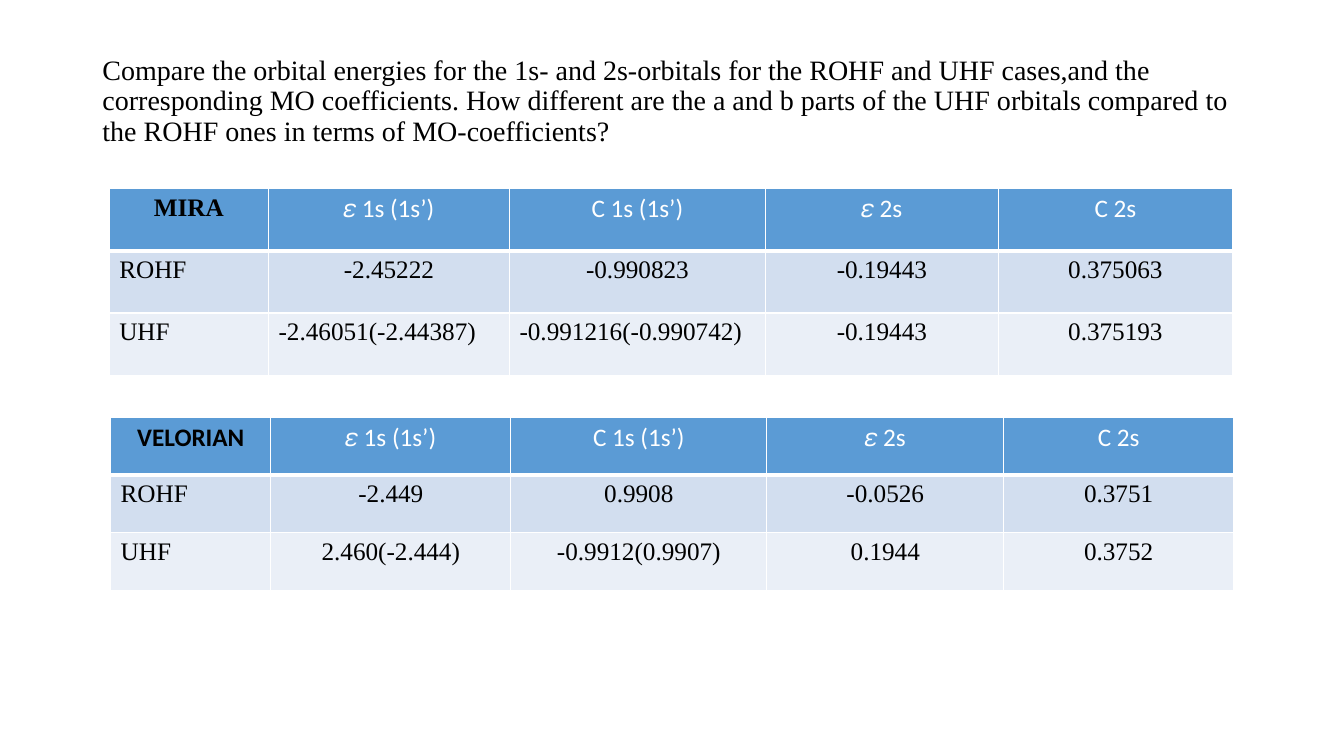
from lxml import etree
from pptx import Presentation
from pptx.dml.color import RGBColor
from pptx.enum.text import MSO_AUTO_SIZE, PP_ALIGN
from pptx.oxml.ns import qn
from pptx.util import Pt

LEFT, CENTER = PP_ALIGN.LEFT, PP_ALIGN.CENTER
NO_FIT = MSO_AUTO_SIZE.NONE
SERIF, SANS = "Times New Roman", "Calibri"
COLORS = {"text": "000000", "white": "FFFFFF", "header": "5B9BD5",
          "odd": "D2DEEF", "even": "EAEFF7"}
HEADINGS = ["𝜀 1s (1s’)", "C 1s (1s’)", "𝜀 2s", "C 2s"]
QUESTION = ("Compare the orbital energies for the 1s- and 2s-orbitals for the ROHF and UHF "
            "cases,and the corresponding MO coefficients. How different are the a and b parts "
            "of the UHF orbitals compared to the ROHF ones in terms of MO-coefficients?")


def write(tf, text, size=18, font=SERIF, color="text", bold=False, align=LEFT):
    """Put one formatted paragraph into a text frame and return it."""
    p = tf.paragraphs[0]
    p.alignment = align
    r = p.add_run()
    r.text = text
    r.font.size, r.font.name, r.font.bold = Pt(size), font, bold
    r.font.color.rgb = RGBColor.from_string(COLORS[color])
    return p


def add_borders(cell, top, bottom):
    """Draw white cell borders, with the given top and bottom widths."""
    tc_pr = cell._tc.get_or_add_tcPr()
    widths = {"a:lnL": 1, "a:lnR": 1, "a:lnT": top, "a:lnB": bottom}
    for i, (tag, width) in enumerate(widths.items()):
        ln = etree.Element(qn(tag), w=str(Pt(width)))
        fill = etree.SubElement(ln, qn("a:solidFill"))
        etree.SubElement(fill, qn("a:srgbClr"), val=COLORS["white"])
        tc_pr.insert(i, ln)


def add_question(s, x, y, w, h):
    """Place the question in the body placeholder, without a bullet."""
    sp = s.placeholders[1]
    sp.left, sp.top, sp.width, sp.height = Pt(x), Pt(y), Pt(w), Pt(h)
    tf = sp.text_frame
    tf.word_wrap, tf.auto_size = True, NO_FIT
    p_pr = tf.paragraphs[0]._p.get_or_add_pPr()
    p_pr.set("marL", "0")
    p_pr.set("indent", "0")
    etree.SubElement(p_pr, qn("a:buNone"))
    p = write(tf, QUESTION, size=20)
    p.line_spacing, p.space_before = 0.9, Pt(0)


def add_energies(s, x, y, widths, row_h, name, name_font, rows, left_cells=()):
    """Place one program's table of orbital energies and coefficients."""
    data = [[name] + HEADINGS] + rows
    table = s.shapes.add_table(len(data), len(widths), Pt(x), Pt(y),
                               Pt(sum(widths)), Pt(row_h * len(data))).table
    for col, width in zip(table.columns, widths):
        col.width = Pt(width)
    for i, values in enumerate(data):
        table.rows[i].height = Pt(row_h)
        for j, value in enumerate(values):
            cell = table.cell(i, j)
            cell.fill.solid()
            cell.fill.fore_color.rgb = RGBColor.from_string(COLORS[("header", "odd", "even")[i]])
            add_borders(cell, 3 if i == 1 else 1, 3 if i == 0 else 1)
            if i == 0 and j == 0:
                style = {"font": name_font, "bold": True, "align": CENTER}
            elif i == 0:
                style = {"font": SANS, "color": "white", "align": CENTER}
            else:
                style = {"align": LEFT if j == 0 or (i, j) in left_cells else CENTER}
            write(cell.text_frame, value, **style)


def main():
    """Build the slide and save it."""
    prs = Presentation()
    prs.slide_width, prs.slide_height = Pt(960), Pt(540)
    s = prs.slides.add_slide(prs.slide_layouts[1])
    title = s.shapes.title._element
    title.getparent().remove(title)
    add_question(s, 66, 36.7, 828, 450)
    add_energies(s, 78, 134.8, [113.8, 172.1, 182.9, 166.3, 167.4], 44.4, "MIRA", SERIF,
                 [["ROHF", "-2.45222", "-0.990823", "-0.19443", "0.375063"],
                  ["UHF", "-2.46051(-2.44387)", "-0.991216(-0.990742)", "-0.19443", "0.375193"]],
                 left_cells=[(2, 1), (2, 2)])
    add_energies(s, 79, 298.1, [114.5, 171.4, 182.9, 169.2, 164.2], 41.2, "VELORIAN", SANS,
                 [["ROHF", "-2.449", "0.9908", "-0.0526", "0.3751"],
                  ["UHF", "2.460(-2.444)", "-0.9912(0.9907)", "0.1944", "0.3752"]])
    prs.save("out.pptx")


if __name__ == "__main__":
    main()
